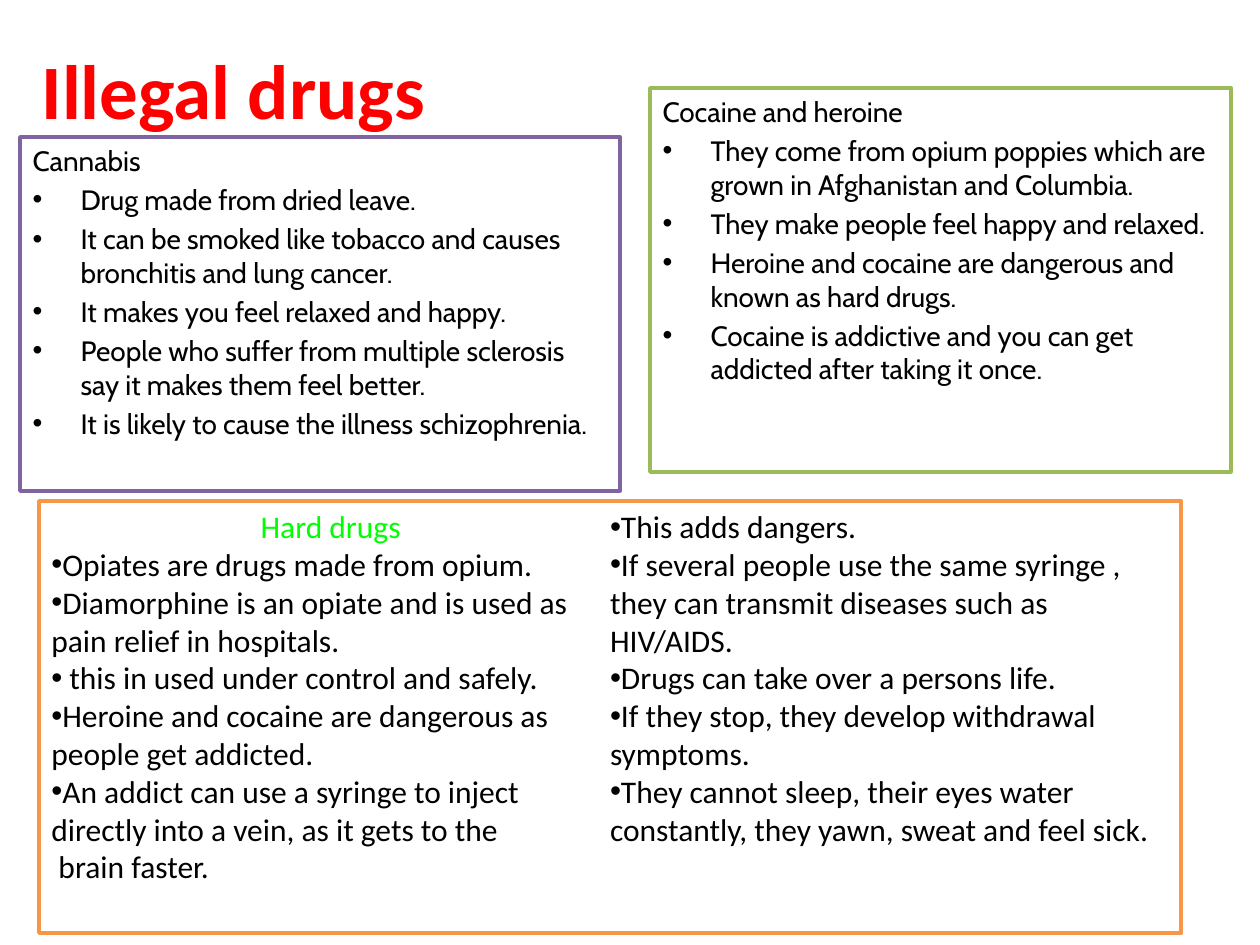
from lxml import etree
from pptx import Presentation, util as u
from pptx.dml.color import RGBColor
from pptx.enum import text
from pptx.oxml.ns import qn

PX = 914400 / 126
COLORS = {
    "title": "FF0000", "text": "000000", "heading": "00FF00", "paper": "FFFFFF",
    "cannabis": "8064A2", "cocaine": "9BBB59", "hard": "F79646",
}
HANG = 48

CANNABIS = [
    "Cannabis",
    "Drug made from dried leave.",
    "It can be smoked like tobacco and causes bronchitis and lung cancer.",
    "It makes you feel relaxed and happy.",
    "People who suffer from multiple sclerosis say it makes them feel better.",
    "It is likely to cause the illness schizophrenia.",
]
COCAINE = [
    "Cocaine and heroine",
    "They come from opium poppies which are grown in Afghanistan and Columbia.",
    "They make people feel happy and relaxed.",
    "Heroine and cocaine are dangerous and known as hard drugs.",
    "Cocaine is addictive and you can get addicted after taking it once.",
]
LAST_LINE = " brain faster."
HARD_DRUGS = [
    "Hard drugs",
    "Opiates are drugs made from opium.",
    "Diamorphine is an opiate and is used as pain relief in hospitals.",
    " this in used under control and safely.",
    "Heroine and cocaine are dangerous as people get addicted.",
    "An addict can use a syringe to inject directly into a vein, as it gets to the",
    LAST_LINE,
    "This adds dangers.",
    "If several people use the same syringe , they can transmit diseases such as HIV/AIDS.",
    "Drugs can take over a persons life.",
    "If they stop, they develop withdrawal symptoms.",
    "They cannot sleep, their eyes water constantly, they yawn, sweat and feel sick.",
]


def px(length):
    return u.Emu(round(length * PX))


def rgb(name):
    return RGBColor.from_string(COLORS[name])


def place(shape, box):
    for name, value in zip(("left", "top", "width", "height"), box):
        setattr(shape, name, px(value))


def frame(shape, color):
    shape.fill.solid()
    shape.fill.fore_color.rgb = rgb("paper")
    shape.line.color.rgb = rgb(color)
    shape.line.width = u.Pt(2)


def write(paragraph, words, color="text", **font):
    run = paragraph.add_run()
    run.text = words
    run.font.color.rgb = rgb(color)
    for name, value in font.items():
        setattr(run.font, name, value)


def set_bullet(paragraph, bulleted, hang=0):
    properties = paragraph._p.get_or_add_pPr()
    properties.set("marL", str(px(hang)))
    properties.set("indent", str(-px(hang)))
    if bulleted:
        etree.SubElement(properties, qn("a:buFont"), typeface="Arial")
        etree.SubElement(properties, qn("a:buChar"), char="•")
    else:
        etree.SubElement(properties, qn("a:buNone"))


def paragraphs_for(text_frame, lines):
    """Yield each line with a paragraph to hold it."""
    text_frame.word_wrap = True
    text_frame.auto_size = text.MSO_AUTO_SIZE.NONE
    for index, line in enumerate(lines):
        yield index, line, text_frame.add_paragraph() if index else text_frame.paragraphs[0]


def add_title(shape, box):
    place(shape, box)
    for _, line, paragraph in paragraphs_for(shape.text_frame, ["Illegal drugs"]):
        paragraph.alignment = text.PP_ALIGN.LEFT
        write(paragraph, line, "title", name="Calibri", size=u.Pt(44), bold=True)


def add_drug_list(shape, box, lines, color):
    place(shape, box)
    frame(shape, color)
    for index, line, paragraph in paragraphs_for(shape.text_frame, lines):
        set_bullet(paragraph, index > 0, HANG)
        write(paragraph, line, name="Cabin", size=u.Pt(16))


def add_hard_drugs(slide, box):
    """Two-column panel; the bottom inset sets where the first column ends."""
    shape = slide.shapes.add_textbox(*map(px, box))
    frame(shape, "hard")
    text_frame = shape.text_frame
    text_frame.margin_bottom = px(25)
    text_frame._txBody.bodyPr.set("numCol", "2")
    for index, line, paragraph in paragraphs_for(text_frame, HARD_DRUGS):
        is_heading = index == 0
        if is_heading:
            paragraph.alignment = text.PP_ALIGN.CENTER
        set_bullet(paragraph, not is_heading and line != LAST_LINE)
        write(paragraph, line, "heading" if is_heading else "text",
              name="Calibri", size=u.Pt(18))


def main():
    presentation = Presentation()
    presentation.slide_width, presentation.slide_height = px(1260), px(945)
    slide = presentation.slides.add_slide(presentation.slide_layouts.get_by_name("Two Content"))
    title, left_list, right_list = list(slide.placeholders)[:3]
    add_title(title, (29, 10, 1134, 158))
    add_drug_list(left_list, (20, 137, 600, 354), CANNABIS, "cannabis")
    add_drug_list(right_list, (650, 88, 581, 384), COCAINE, "cocaine")
    add_hard_drugs(slide, (39, 501, 1142, 432))
    presentation.save("out.pptx")


if __name__ == "__main__":
    main()
